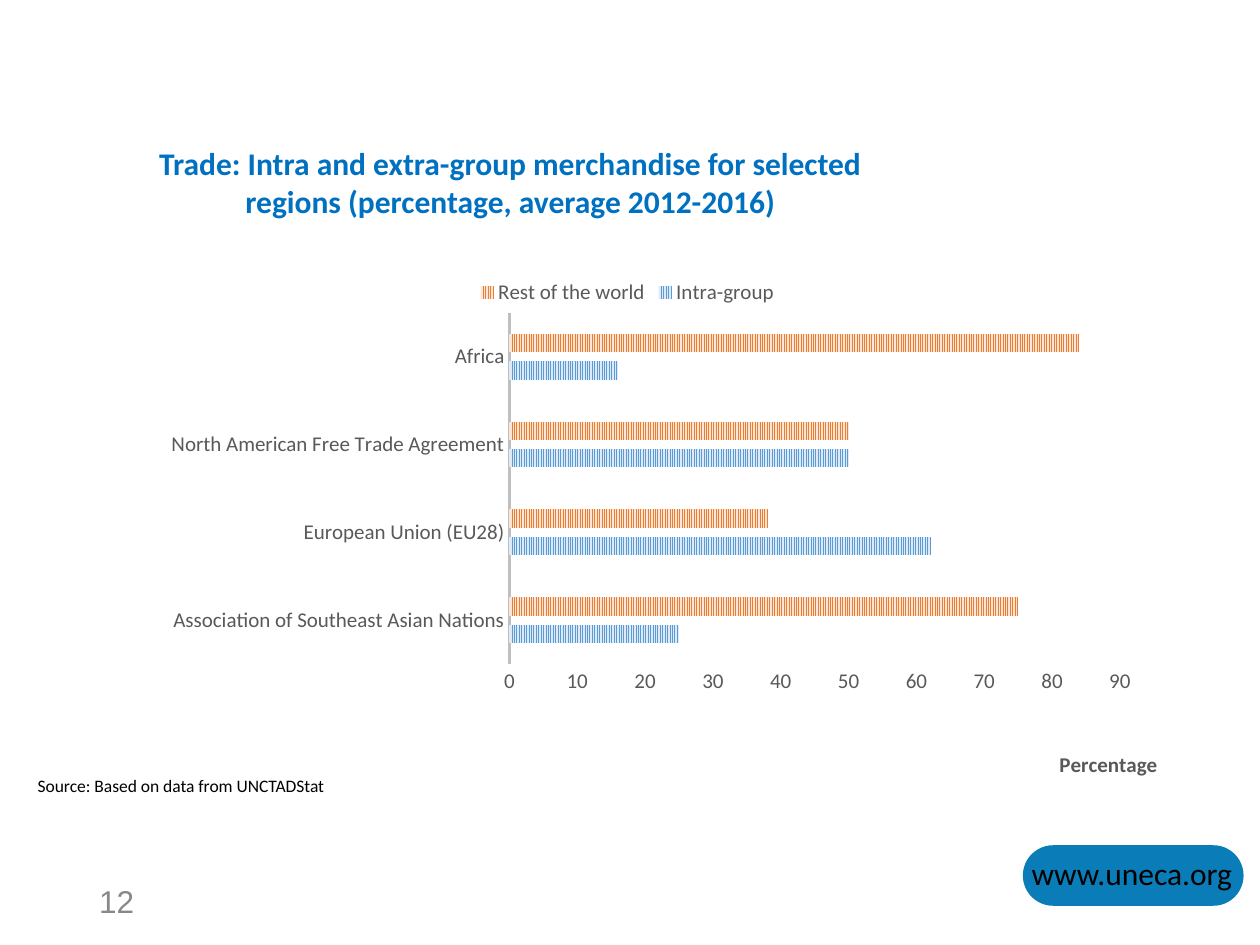
"""Build a slide comparing intra-group and extra-group trade of four regions."""
from typing import NamedTuple

from lxml.etree import SubElement
from pptx import Presentation
from pptx.chart.data import CategoryChartData
from pptx.dml.color import RGBColor
from pptx.enum.chart import XL_CHART_TYPE as ChartType
from pptx.enum.chart import XL_LEGEND_POSITION as LegendPosition
from pptx.enum.chart import XL_TICK_MARK as TickMark
from pptx.enum.dml import MSO_PATTERN_TYPE as Pattern
from pptx.enum.shapes import MSO_SHAPE as Shape
from pptx.enum.text import MSO_ANCHOR as Anchor
from pptx.enum.text import MSO_AUTO_SIZE as AutoSize
from pptx.enum.text import PP_ALIGN as Align
from pptx.oxml.ns import qn
from pptx.util import Cm, Pt

LABEL_GREY = "595959"


class Box(NamedTuple):
    left: float
    top: float
    width: float
    height: float

    def lengths(self):
        return [Cm(value) for value in self]


class Style(NamedTuple):
    size: float
    colour: str
    bold: bool = False
    family: str = "Calibri"


class Note(NamedTuple):
    text: str
    box: Box
    style: Style
    anchor: Anchor


class TradeShare(NamedTuple):
    name: str
    stripe: str
    ground: str
    percentages: tuple


TITLE = "Trade: Intra and extra-group merchandise for selected regions (percentage, average 2012-2016)"
NOTES = (
    Note("12", Box(1.75, 17.65, 5.72, 1.02), Style(18, "888888", family="Arial"), Anchor.MIDDLE),
    Note("Source: Based on data from UNCTADStat", Box(0.51, 15.49, 10.34, 1.12),
         Style(10, "000000"), Anchor.TOP),
)
REGIONS = ("Association of Southeast Asian Nations", "European Union (EU28)",
           "North American Free Trade Agreement", "Africa")
SHARES = (
    TradeShare("Intra-group", "5B9BD5", "DEEBF7", (25, 62, 50, 16)),
    TradeShare("Rest of the world", "ED7D31", "FBE5D6", (75, 38, 50, 84)),
)


def rgb(value: str) -> RGBColor:
    return RGBColor.from_string(value)


def style_font(font, style: Style) -> None:
    font.name, font.size, font.bold = style.family, Pt(style.size), style.bold
    font.color.rgb = rgb(style.colour)


def write(paragraph, text: str, style: Style, align: Align = Align.LEFT) -> None:
    paragraph.alignment = align
    run = paragraph.add_run()
    run.text = text
    style_font(run.font, style)


def place(parent, index: int, **settings) -> None:
    layout = parent.find(qn("c:layout"))
    if layout is None:
        layout = SubElement(parent, qn("c:layout"))
        parent.insert(index, layout)
    for child in list(layout):
        layout.remove(child)
    manual = SubElement(layout, qn("c:manualLayout"))
    for tag, value in settings.items():
        SubElement(manual, qn(f"c:{tag}")).set("val", str(value))


def add_title(slide) -> None:
    title = slide.shapes.title
    title.left, title.top, title.width, title.height = Box(2.39, 2.77, 15.8, 1.8).lengths()
    frame = title.text_frame
    frame.word_wrap, frame.auto_size = True, AutoSize.NONE
    frame.vertical_anchor = Anchor.TOP
    write(frame.paragraphs[0], TITLE, Style(18, "0070C0", bold=True), Align.CENTER)


def add_note(slide, note: Note) -> None:
    frame = slide.shapes.add_textbox(*note.box.lengths()).text_frame
    frame.word_wrap = True
    frame.vertical_anchor = note.anchor
    write(frame.paragraphs[0], note.text, note.style)


def add_web_badge(slide, address: str, box: Box) -> None:
    badge = slide.shapes.add_shape(Shape.ROUNDED_RECTANGLE, *box.lengths())
    badge.adjustments[0] = 0.5
    badge.shadow.inherit = False
    badge.fill.solid()
    badge.fill.fore_color.rgb = rgb("0A7CB8")
    badge.line.fill.background()
    frame = badge.text_frame
    frame.word_wrap = False
    frame.vertical_anchor = Anchor.TOP
    frame.margin_left = frame.margin_right = frame.margin_top = frame.margin_bottom = 0
    write(frame.paragraphs[0], address, Style(18, "000000"))


def format_axes(chart) -> None:
    regions, percentage = chart.category_axis, chart.value_axis
    for axis in (regions, percentage):
        axis.has_major_gridlines = False
        axis.major_tick_mark = axis.minor_tick_mark = TickMark.NONE
        style_font(axis.tick_labels.font, Style(12, LABEL_GREY))
    regions.format.line.color.rgb = rgb("BFBFBF")
    regions.format.line.width = Pt(1.5)
    percentage.format.line.fill.background()
    percentage.minimum_scale, percentage.maximum_scale, percentage.major_unit = 0, 90, 10
    percentage.tick_labels.number_format = "0"
    percentage.tick_labels.number_format_is_linked = False
    caption = percentage.axis_title
    write(caption.text_frame.paragraphs[0], "Percentage", Style(12, LABEL_GREY, bold=True),
          Align.CENTER)
    place(caption._element, 1, xMode="edge", yMode="edge", x=0.9, y=0.82)


def add_trade_chart(slide, box: Box) -> None:
    shares = CategoryChartData(number_format="0")
    shares.categories = REGIONS
    for share in SHARES:
        shares.add_series(share.name, share.percentages)
    chart = slide.shapes.add_chart(ChartType.BAR_CLUSTERED, *box.lengths(), shares).chart
    style_font(chart.font, Style(10, "000000"))
    chart.has_title = False
    chart.has_legend = True
    chart.legend.position = LegendPosition.TOP
    chart.legend.include_in_layout = False
    style_font(chart.legend.font, Style(12, LABEL_GREY))
    plot = chart.plots[0]
    plot.vary_by_categories = False
    plot.gap_width, plot.overlap = 227, -48
    for bars, share in zip(plot.series, SHARES):
        bars.invert_if_negative = False
        fill = bars.format.fill
        fill.patterned()
        fill.pattern = Pattern.NARROW_VERTICAL
        fill.fore_color.rgb = rgb(share.stripe)
        fill.back_color.rgb = rgb(share.ground)
    format_axes(chart)
    place(chart._chartSpace.chart.plotArea, 0, layoutTarget="inner", xMode="edge", yMode="edge",
          x=0.39, y=0.08, w=0.57, h=0.6)


def main() -> None:
    deck = Presentation()
    deck.slide_width, deck.slide_height = Cm(25.4), Cm(19.05)
    slide = deck.slides.add_slide(deck.slide_layouts.get_by_name("Title Only"))
    add_web_badge(slide, "www.uneca.org", Box(20.62, 17.04, 4.45, 1.22))
    for note in NOTES:
        add_note(slide, note)
    add_trade_chart(slide, Box(1.85, 5.36, 21.59, 11.81))
    add_title(slide)
    deck.save("out.pptx")


if __name__ == "__main__":
    main()
